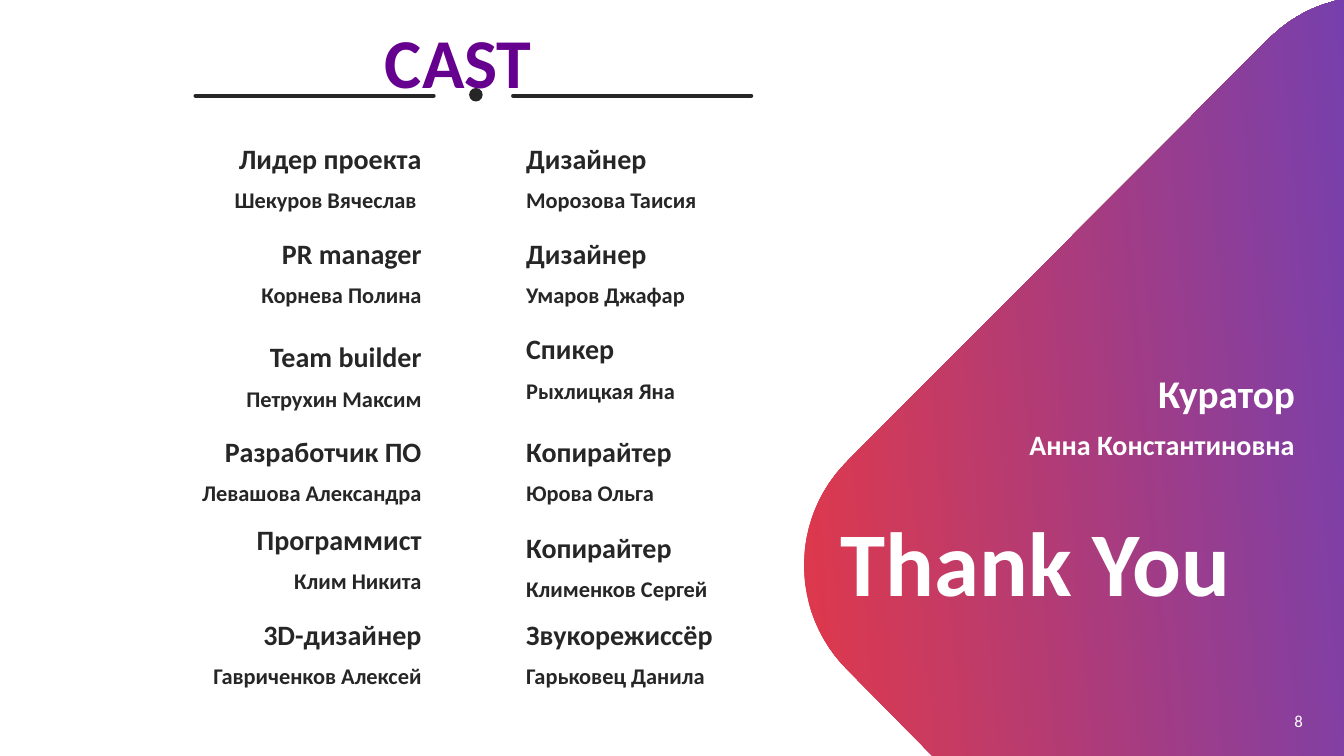
from dataclasses import dataclass

from lxml import etree
from pptx import Presentation
from pptx.dml.color import RGBColor
from pptx.enum.shapes import MSO_CONNECTOR, MSO_SHAPE
from pptx.enum.text import MSO_ANCHOR, PP_ALIGN
from pptx.oxml.ns import qn
from pptx.util import Inches, Pt

LEFT, RIGHT = PP_ALIGN.LEFT, PP_ALIGN.RIGHT
TOP, MIDDLE = MSO_ANCHOR.TOP, MSO_ANCHOR.MIDDLE
STRAIGHT = MSO_CONNECTOR.STRAIGHT
OVAL = MSO_SHAPE.OVAL


@dataclass(frozen=True)
class Theme:
    font: str = "Calibri"
    ink: str = "252625"
    white: str = "FFFFFF"
    title: str = "66008F"
    panel_start: str = "D8071E"
    panel_end: str = "561099"
    panel_opacity: int = 80
    title_size: int = 50
    thanks_size: int = 65
    curator_size: int = 28
    role_size: int = 20
    name_size: int = 16
    number_size: int = 12


THEME = Theme()

LEFT_CAST = [
    (1.39, "Лидер проекта", "Шекуров Вячеслав "),
    (2.33, "PR manager", "Корнева Полина"),
    (3.36, "Team builder", "Петрухин Максим"),
    (4.3, "Разработчик ПО", "Левашова Александра"),
    (5.17, "Программист", "Клим Никита"),
    (6.11, "3D-дизайнер", "Гавриченков Алексей"),
]
RIGHT_CAST = [
    (1.39, "Дизайнер", "Морозова Таисия"),
    (2.33, "Дизайнер", "Умаров Джафар"),
    (3.28, "Спикер", "Рыхлицкая Яна"),
    (4.3, "Копирайтер", "Юрова Ольга"),
    (5.25, "Копирайтер", "Клименков Сергей"),
    (6.11, "Звукорежиссёр", "Гарьковец Данила"),
]


def write_text(paragraph, text, *, size, color, bold=True, align=LEFT,
               line_spacing=0.9, space_before=0):
    paragraph.alignment = align
    paragraph.line_spacing = line_spacing
    paragraph.space_before = Pt(space_before)
    run = paragraph.add_run()
    run.text = text
    run.font.name = THEME.font
    run.font.size = Pt(size)
    run.font.bold = bold
    run.font.color.rgb = RGBColor.from_string(color)


def curve_points(start, control_1, control_2, end, steps=24):
    """Points along a cubic Bezier curve, without its start."""
    points = []
    for step in range(1, steps + 1):
        t = step / steps
        weights = ((1 - t) ** 3, 3 * t * (1 - t) ** 2, 3 * t * t * (1 - t), t ** 3)
        points.append(tuple(
            sum(weight * value for weight, value in zip(weights, values))
            for values in zip(start, control_1, control_2, end)))
    return points


class SlideBuilder:
    def __init__(self, presentation, theme):
        self.theme = theme
        self.slide = presentation.slides.add_slide(presentation.slide_layouts[6])

    def text_box(self, left, top, width, height, lines, anchor=TOP, **shared):
        """Each line is a text and its own format; shared format goes to all."""
        box = self.slide.shapes.add_textbox(
            Inches(left), Inches(top), Inches(width), Inches(height))
        frame = box.text_frame
        frame.word_wrap = True
        frame.vertical_anchor = anchor
        for index, (text, own) in enumerate(lines):
            paragraph = frame.add_paragraph() if index else frame.paragraphs[0]
            write_text(paragraph, text, space_before=10 if index else 0,
                       **shared, **own)

    def credit(self, left, top, role, name, align):
        self.text_box(left, top, 2.65, 0.79,
                      [(role, {"size": self.theme.role_size}),
                       (name, {"size": self.theme.name_size})],
                      color=self.theme.ink, align=align)

    def gradient_panel(self, points):
        corners = [(Inches(x), Inches(y)) for x, y in points]
        builder = self.slide.shapes.build_freeform(*corners[0])
        builder.add_line_segments(corners[1:], close=True)
        panel = builder.convert_to_shape()
        panel.shadow.inherit = False
        panel.line.fill.background()
        panel.fill.gradient()
        panel.fill.gradient_angle = 5
        colors = (self.theme.panel_start, self.theme.panel_end)
        for position, (stop, color) in enumerate(zip(panel.fill.gradient_stops, colors)):
            stop.position = position
            stop.color.rgb = RGBColor.from_string(color)
        for color_element in panel.element.spPr.iter(qn("a:srgbClr")):
            alpha = etree.SubElement(color_element, qn("a:alpha"))
            alpha.set("val", str(self.theme.panel_opacity * 1000))

    def rule(self, group, start, end, y):
        line = group.shapes.add_connector(
            STRAIGHT, Inches(start), Inches(y), Inches(end), Inches(y))
        line.line.color.rgb = RGBColor.from_string(self.theme.ink)
        line.line.width = Pt(3)
        properties = line.element.spPr
        properties.find(qn("a:ln")).set("cap", "rnd")
        etree.SubElement(properties, qn("a:effectLst"))

    def dot(self, group, left, top, size):
        dot = group.shapes.add_shape(
            OVAL, Inches(left), Inches(top), Inches(size), Inches(size))
        dot.shadow.inherit = False
        ink = RGBColor.from_string(self.theme.ink)
        dot.fill.solid()
        dot.fill.fore_color.rgb = ink
        dot.line.color.rgb = ink
        dot.line.width = Pt(1)

    def title_divider(self):
        group = self.slide.shapes.add_group_shape()
        self.rule(group, 1.94, 4.3, 0.95)
        self.dot(group, 4.66, 0.88, 0.12)
        self.rule(group, 5.09, 7.45, 0.95)


def main():
    presentation = Presentation()
    presentation.slide_width = Inches(13.33)
    presentation.slide_height = Inches(7.5)
    builder = SlideBuilder(presentation, THEME)

    lower, upper, peak = (8.41, 6.65), (8.41, 4.57), (12.58, 0.39)
    builder.gradient_panel(
        [(13.27, 0), (13.33, 0), (13.33, 7.5), (9.25, 7.5), lower]
        + curve_points(lower, (7.83, 6.08), (7.83, 5.14), upper)
        + [peak]
        + curve_points(peak, (12.76, 0.21), (12.98, 0.08), (13.21, 0.02)))

    builder.title_divider()
    builder.text_box(3.72, 0.05, 2.16, 0.78, [("CAST", {})],
                     size=THEME.title_size, color=THEME.title, line_spacing=1.1)

    for left, align, cast in ((1.63, RIGHT, LEFT_CAST), (5.12, LEFT, RIGHT_CAST)):
        for top, role, name in cast:
            builder.credit(left, top, role, name, align)

    builder.text_box(9.66, 3.67, 3.28, 0.94,
                     [("Куратор", {"size": THEME.curator_size}),
                      ("Анна Константиновна", {"size": THEME.role_size})],
                     color=THEME.white, align=RIGHT)
    builder.text_box(8.24, 5.09, 4.72, 1.1, [("Thank You", {})],
                     size=THEME.thanks_size, color=THEME.white)
    builder.text_box(12.35, 6.95, 0.67, 0.4, [("8", {})], anchor=MIDDLE,
                     size=THEME.number_size, color=THEME.white, bold=False,
                     align=RIGHT, line_spacing=1.0)

    presentation.save("out.pptx")


if __name__ == "__main__":
    main()
